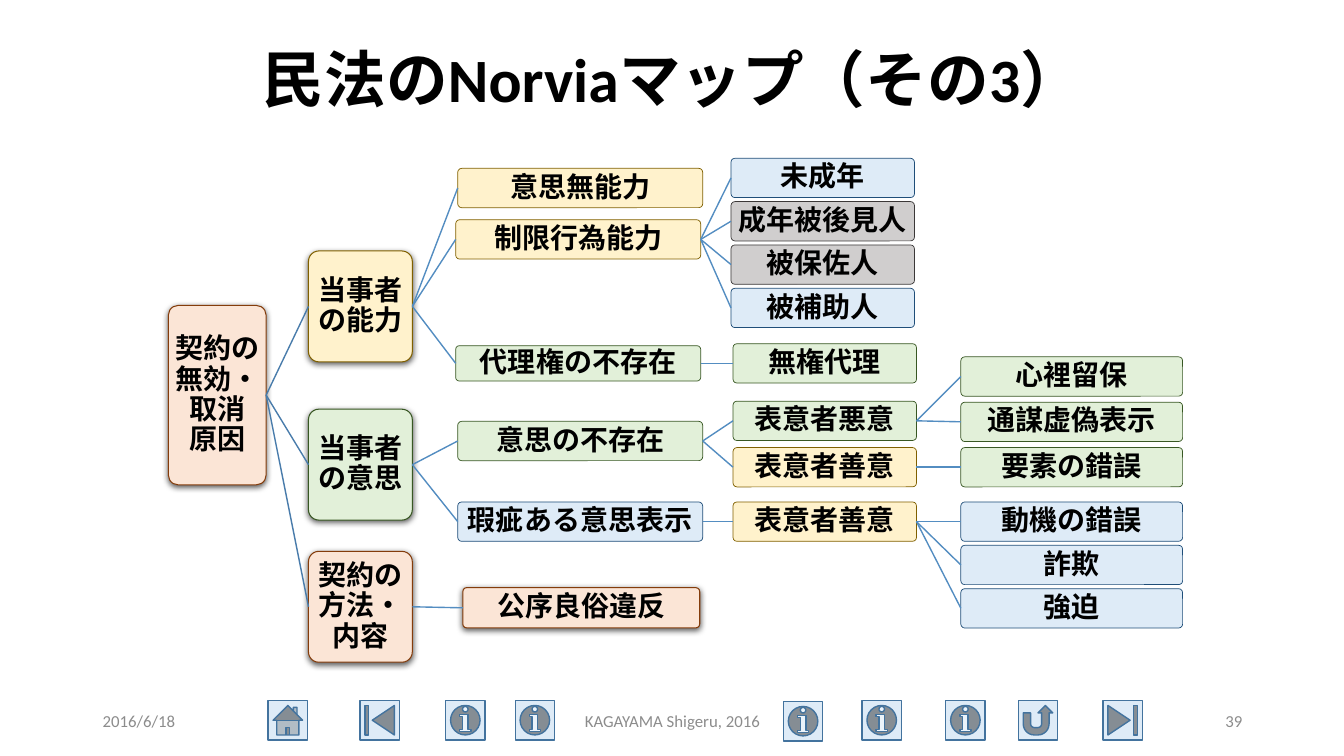
from lxml.etree import SubElement
from pptx import Presentation
from pptx.dml.color import RGBColor
from pptx.enum.shapes import MSO_CONNECTOR, MSO_SHAPE
from pptx.enum.text import MSO_ANCHOR, PP_ALIGN
from pptx.oxml.ns import qn
from pptx.util import Pt

PX = 9144  # EMU per px, 100 px to the inch


def write(frame, text, size=20, color="000000", bold=False,
          align=PP_ALIGN.CENTER, spacing=1.0, margin=None):
    frame.word_wrap = True
    frame.vertical_anchor = MSO_ANCHOR.MIDDLE
    if margin is not None:
        frame.margin_left = frame.margin_right = margin * PX
        frame.margin_top = frame.margin_bottom = margin * PX
    paragraph = frame.paragraphs[0]
    paragraph.text = text
    paragraph.alignment = align
    paragraph.line_spacing = spacing
    for run in paragraph.runs:
        run.font.name = "Calibri"
        run.font.size = Pt(size)
        run.font.bold = bold
        run.font.color.rgb = RGBColor.from_string(color)


def add_box(kind, left, top, width, height, fill, line, line_width):
    shape = slide.shapes.add_shape(kind, left * PX, top * PX, width * PX, height * PX)
    shape.shadow.inherit = False
    shape.fill.solid()
    shape.fill.fore_color.rgb = RGBColor.from_string(fill)
    shape.line.color.rgb = RGBColor.from_string(line)
    shape.line.width = Pt(line_width)
    return shape


presentation = Presentation()
presentation.slide_width = 1333 * PX
presentation.slide_height = 750 * PX
slide = presentation.slides.add_slide(presentation.slide_layouts[6])

# Navigation buttons
INFORMATION = MSO_SHAPE.ACTION_BUTTON_INFORMATION
buttons = [
    (MSO_SHAPE.ACTION_BUTTON_HOME, 266, 695),
    (MSO_SHAPE.ACTION_BUTTON_BEGINNING, 357, 695),
    (INFORMATION, 442, 695),
    (INFORMATION, 511, 695),
    (INFORMATION, 777, 696),
    (INFORMATION, 855, 695),
    (INFORMATION, 938, 695),
    (MSO_SHAPE.ACTION_BUTTON_RETURN, 1010, 695),
    (MSO_SHAPE.ACTION_BUTTON_END, 1094, 695),
]
for kind, left, top in buttons:
    add_box(kind, left, top, 39, 39, "DEEBF7", "43739E", 1)

# Title and footer
title_format = dict(size=44, bold=True, spacing=0.9)
footer_format = dict(size=12, color="8C8C8C")
labels = [
    ("民法のNorviaマップ（その3）", 92, 40, 1150, 83, PP_ALIGN.CENTER, title_format),
    ("2016/6/18", 92, 695, 300, 40, PP_ALIGN.LEFT, footer_format),
    ("KAGAYAMA Shigeru, 2016", 442, 695, 450, 40, PP_ALIGN.CENTER, footer_format),
    ("39", 942, 695, 300, 40, PP_ALIGN.RIGHT, footer_format),
]
for text, left, top, width, height, align, text_format in labels:
    text_box = slide.shapes.add_textbox(left * PX, top * PX, width * PX, height * PX)
    write(text_box.text_frame, text, align=align, **text_format)

# Tree: fill and outline of each colour, box size of each level
PEACH = ("FBE5D6", "843C0B")
YELLOW = ("FFF2CC", "806000")
GREEN = ("E2F0D9", "385723")
BLUE = ("DEEBF7", "1F4E79")
GRAY = ("D0CECE", "3B3838")
level_sizes = [(97, 178), (103, 110), (243, 39), (182, 39), (220, 39)]
special_sizes = {"代理権の不存在": (243, 35), "公序良俗違反": (235, 40)}

# Level, text, colour, left, top; the parent is the last box one level up
nodes = [
    (0, "契約の\n無効・\n取消\n原因", PEACH, 167, 303),
    (1, "当事者\nの能力", YELLOW, 306, 249),
    (2, "意思無能力", YELLOW, 454, 167),
    (2, "制限行為能力", YELLOW, 452, 218),
    (3, "未成年", BLUE, 725, 157),
    (3, "成年被後見人", GRAY, 725, 200),
    (3, "被保佐人", GRAY, 725, 243),
    (3, "被補助人", BLUE, 725, 286),
    (2, "代理権の不存在", GREEN, 452, 343),
    (3, "無権代理", GREEN, 727, 341),
    (1, "当事者\nの意思", GREEN, 306, 406),
    (2, "意思の不存在", GREEN, 454, 418),
    (3, "表意者悪意", GREEN, 727, 398),
    (4, "心裡留保", GREEN, 953, 354),
    (4, "通謀虚偽表示", GREEN, 953, 399),
    (3, "表意者善意", YELLOW, 727, 444),
    (4, "要素の錯誤", GREEN, 953, 444),
    (2, "瑕疵ある意思表示", BLUE, 454, 498),
    (3, "表意者善意", YELLOW, 727, 498),
    (4, "動機の錯誤", BLUE, 953, 498),
    (4, "詐欺", BLUE, 953, 541),
    (4, "強迫", BLUE, 953, 584),
    (1, "契約の方法・\n内容", PEACH, 306, 547),
    (2, "公序良俗違反", PEACH, 459, 583),
]
latest = {}
for level, text, colors, left, top in nodes:
    width, height = special_sizes.get(text, level_sizes[level])
    raised = level < 2 or colors == PEACH
    box = add_box(MSO_SHAPE.ROUNDED_RECTANGLE, left, top, width, height,
                  *colors, 0.75 if raised else 0.5)
    box.adjustments[0] = 0.1
    write(box.text_frame, text, bold=True, spacing=0.9, margin=1)
    latest[level] = box

    # Soft shadow under the raised boxes
    if raised:
        effects = box._element.spPr.find(qn("a:effectLst"))
        shadow = SubElement(effects, qn("a:outerShdw"), blurRad=str(Pt(4.5)),
                            dist=str(Pt(1.5)), dir="5400000", rotWithShape="0")
        shadow_color = SubElement(shadow, qn("a:srgbClr"), val="000000")
        SubElement(shadow_color, qn("a:alpha"), val="63000")

    # Branch from the right side of the parent to the left side of the box
    if level > 0:
        branch = slide.shapes.add_connector(MSO_CONNECTOR.STRAIGHT, 0, 0, 0, 0)
        branch.begin_connect(latest[level - 1], 3)
        branch.end_connect(box, 1)
        branch.line.color.rgb = RGBColor.from_string("497CAB" if level == 1 else "538DC1")
        branch.line.width = Pt(1)
        SubElement(branch._element.spPr, qn("a:effectLst"))

presentation.save("out.pptx")
